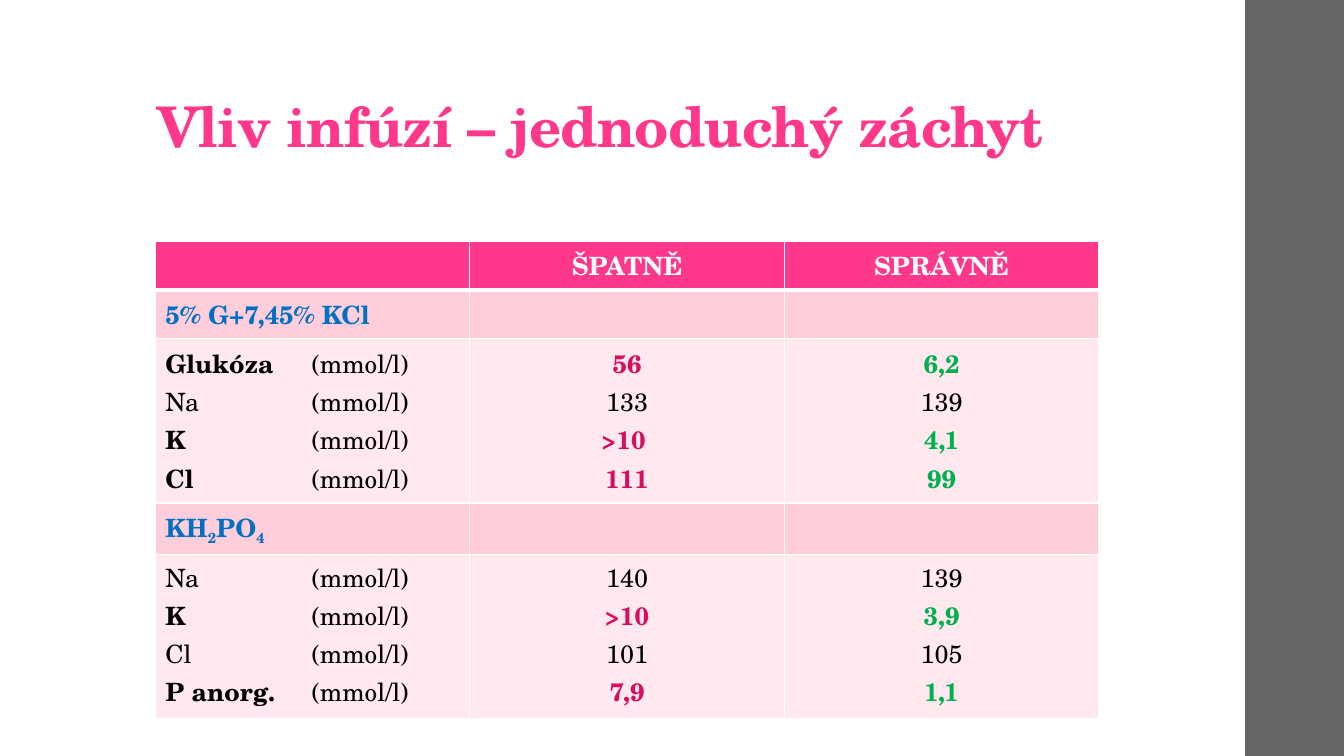
from lxml.etree import SubElement as Sub
from pptx import Presentation
from pptx.dml.color import RGBColor as RGB
from pptx.enum.shapes import MSO_SHAPE as Shape
from pptx.enum.text import MSO_ANCHOR as Anchor, PP_ALIGN as Align
from pptx.oxml import parse_xml
from pptx.oxml.ns import nsdecls, qn
from pptx.util import Inches, Pt

# Content
TITLE = "Vliv infúzí – jednoduchý záchyt"
HEADS = ["", "ŠPATNĚ", "SPRÁVNĚ"]
UNIT = "(mmol/l)"
# Each group: heading parts (text, subscript), then (name, wrong, right, marked)
GROUPS = [
    ([("5% G+7,45% KCl", False)],
     [("Glukóza", "56", "6,2", True),
      ("Na", "133", "139", False),
      ("K", ">10 ", "4,1", True),
      ("Cl", "111", "99", True)]),
    ([("KH", False), ("2", True), ("PO", False), ("4", True)],
     [("Na", "140", "139", False),
      ("K", ">10", "3,9", True),
      ("Cl", "101", "105", False),
      ("P anorg.", "7,9", "1,1", True)]),
]

# Look
FONT = "TeX Gyre Schola"
PINK, ROSE, PALE = RGB(255, 56, 140), RGB(255, 206, 218), RGB(255, 232, 238)
WHITE, BLACK, GRAY = RGB(255, 255, 255), RGB(0, 0, 0), RGB(102, 102, 102)
BLUE, RED, GREEN = RGB(0, 112, 192), RGB(215, 13, 94), RGB(0, 176, 80)

# Layout in inches
WIDE, HIGH = 13.33, 7.5
BAR = 12.35
LEFT, TOP, COL = 1.54, 2.39, 3.12
ROWS = [0.49, 0.48, 1.63, 0.51, 1.63]
TAB = 1.45


def write(para, text, color, bold=True, size=18, sub=False):
    run = para.add_run()
    run.text = text
    look = {"name": FONT, "size": Pt(size), "bold": bold}
    for key, val in look.items():
        setattr(run.font, key, val)
    run.font.color.rgb = color
    if sub:
        run._r.get_or_add_rPr().set("baseline", "-25000")
    return run


def lines(cell, count):
    frame = cell.text_frame
    return [frame.paragraphs[0]] + [frame.add_paragraph() for _ in range(count - 1)]


def paint(cell, color, base=1):
    cell.fill.solid()
    cell.fill.fore_color.rgb = color
    props = cell._tc.get_or_add_tcPr()
    for spot, side in enumerate("LRTB"):
        width = Pt(base if side == "B" else 1)
        props.insert(spot, parse_xml(
            f'<a:ln{side} {nsdecls("a")} w="{width}"><a:solidFill>'
            f'<a:srgbClr val="{WHITE}"/></a:solidFill></a:ln{side}>'))


def set_tab(para):
    stops = Sub(para._p.get_or_add_pPr(), qn("a:tabLst"))
    Sub(stops, qn("a:tab"), pos=str(Inches(TAB)), algn="l")


def main():
    deck = Presentation()
    deck.slide_width, deck.slide_height = Inches(WIDE), Inches(HIGH)
    slide = deck.slides.add_slide(deck.slide_layouts[6])

    # Side bar
    bar = slide.shapes.add_shape(Shape.RECTANGLE, Inches(BAR), 0,
                                 Inches(WIDE - BAR), Inches(HIGH))
    bar.shadow.inherit = False
    bar.fill.solid()
    bar.fill.fore_color.rgb = GRAY
    bar.line.fill.background()

    # Title
    box = slide.shapes.add_textbox(*map(Inches, (1.46, 0.29, 10.52, 1.34)))
    frame = box.text_frame
    form = {"word_wrap": True, "vertical_anchor": Anchor.BOTTOM,
            "margin_top": Inches(0.03), "margin_bottom": Inches(0.05)}
    for key, val in form.items():
        setattr(frame, key, val)
    para = frame.paragraphs[0]
    para.line_spacing = 0.9
    run = write(para, TITLE, PINK, size=40)
    run._r.get_or_add_rPr().set("spc", "-50")

    # Table grid
    grid = slide.shapes.add_table(len(ROWS), len(HEADS), Inches(LEFT), Inches(TOP),
                                  Inches(COL * len(HEADS)), Inches(sum(ROWS))).table
    for col in grid.columns:
        col.width = Inches(COL)
    for row, tall in zip(grid.rows, ROWS):
        row.height = Inches(tall)
    for num, row in enumerate(grid.rows):
        for cell in row.cells:
            if num == 0:
                paint(cell, PINK, base=3)
            else:
                paint(cell, ROSE if num % 2 else PALE)

    # Header row
    for num, head in enumerate(HEADS):
        if head:
            para = grid.cell(0, num).text_frame.paragraphs[0]
            para.alignment = Align.CENTER
            write(para, head, WHITE)

    # Groups: a heading row, then a row of values
    for num, (parts, tests) in enumerate(GROUPS):
        row = 1 + 2 * num
        para = grid.cell(row, 0).text_frame.paragraphs[0]
        for text, sub in parts:
            write(para, text, BLUE, sub=sub)
        cols = [lines(grid.cell(row + 1, col), len(tests)) for col in range(3)]
        for test, name, bad, good in zip(tests, *cols):
            label, wrong, right, mark = test
            set_tab(name)
            write(name, label, BLACK, mark)
            write(name, "\t" + UNIT, BLACK, False)
            for para, text, hue in ((bad, wrong, RED), (good, right, GREEN)):
                para.alignment = Align.CENTER
                write(para, text, hue if mark else BLACK, mark)

    deck.save("out.pptx")


if __name__ == "__main__":
    main()
